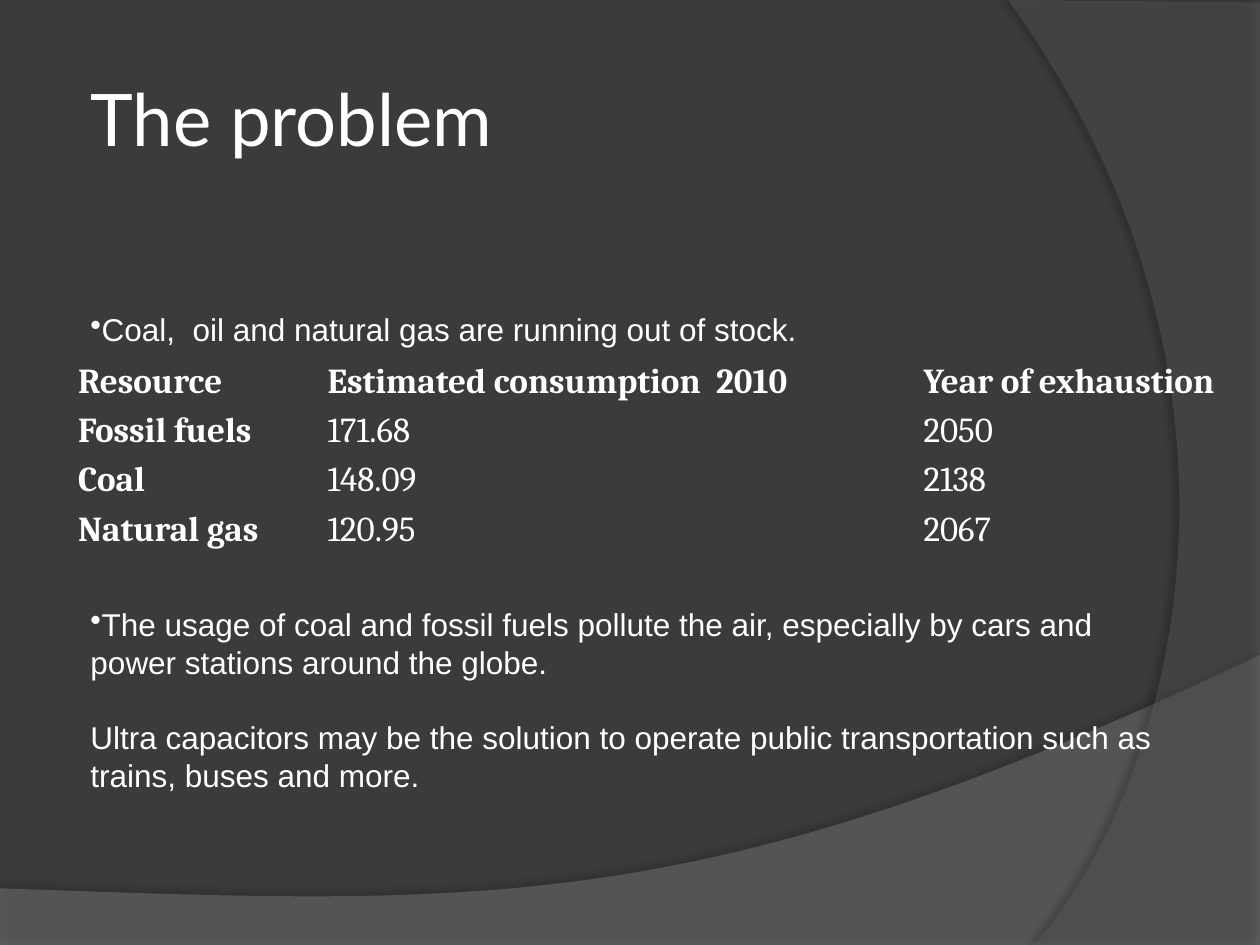
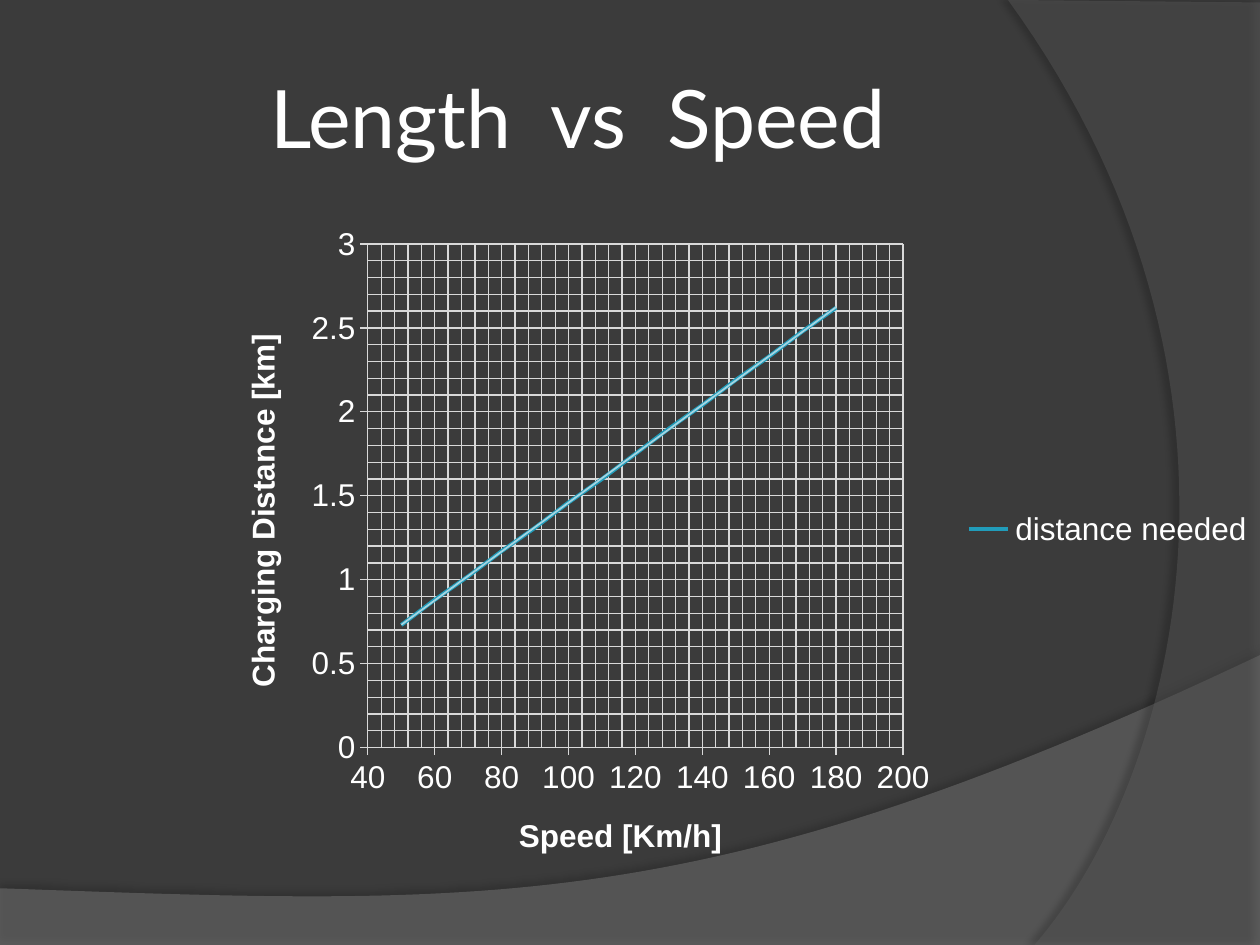
from copy import deepcopy
from dataclasses import dataclass

from pptx import Presentation
from pptx.chart.data import XyChartData
from pptx.dml.color import RGBColor
from pptx.enum.chart import XL_CHART_TYPE, XL_LEGEND_POSITION, XL_TICK_MARK
from pptx.enum.text import MSO_ANCHOR, PP_ALIGN
from pptx.oxml import parse_xml
from pptx.oxml.ns import nsdecls, qn
from pptx.util import Emu, Pt

PX = 9144  # EMU per px, 100 px to the inch
WIDTH, HEIGHT = 1000, 750


@dataclass(frozen=True)
class Theme:
    background: str = "3B3B3B"
    text: str = "FFFFFF"
    wave: str = "7F7F7F"
    arc: str = "5E5E5E"
    grid: str = "D9D9D9"
    series: str = "219CBA"
    trend: str = "A5D5E2"
    title_font: str = "Lato"
    body_font: str = "Arial"
    table_font: str = "Cambria"
    title_size: float = 46
    small_title_size: float = 41.4
    body_size: float = 18
    table_size: float = 20


THEME = Theme()
NO_GRID_STYLE = "{2D5ABB26-0587-4C30-8999-92F81FD0307C}"

RESOURCES = [
    ("Resource", "Estimated consumption  2010", "Year of exhaustion"),
    ("Fossil fuels", "171.68", "2050"),
    ("Coal", "148.09", "2138"),
    ("Natural gas", "120.95", "2067"),
]
SPEEDS = range(50, 181, 10)
DISTANCES = [0.73, 0.88, 1.02, 1.17, 1.31, 1.46, 1.6,
             1.75, 1.9, 2.04, 2.19, 2.33, 2.48, 2.62]


def px(*lengths):
    return [Emu(round(length * PX)) for length in lengths]


def color(value):
    return RGBColor.from_string(value)


def curve(start, pull_start, pull_end, end, steps=60):
    """Points of a cubic curve, without its start."""
    points = []
    for step in range(1, steps + 1):
        t = step / steps
        weights = ((1 - t) ** 3, 3 * t * (1 - t) ** 2, 3 * t * t * (1 - t), t ** 3)
        corners = (start, pull_start, pull_end, end)
        points.append(tuple(sum(w * corner[axis] for w, corner in zip(weights, corners))
                            for axis in (0, 1)))
    return points


def write(frame, text, first=True, size=THEME.body_size, font=THEME.body_font,
          bold=False, align=PP_ALIGN.LEFT, bullet=None, before=0):
    para = frame.paragraphs[0] if first else frame.add_paragraph()
    para.alignment = align
    para.space_before = Pt(before)
    if bullet:
        para._p.get_or_add_pPr().append(
            parse_xml(f'<a:buChar {nsdecls("a")} char="{bullet}"/>'))
    span = para.add_run()
    span.text = text
    span.font.size, span.font.name, span.font.bold = Pt(size), font, bold
    span.font.color.rgb = color(THEME.text)


def chart_layout(x, y, w, h, inner=False):
    target = '<c:layoutTarget val="inner"/>' if inner else ""
    sizes = "".join(f'<c:{key} val="{value}"/>'
                    for key, value in zip("xywh", (x, y, w, h)))
    return parse_xml(
        f'<c:layout {nsdecls("c")}><c:manualLayout>{target}<c:xMode val="edge"/>'
        f'<c:yMode val="edge"/>{sizes}</c:manualLayout></c:layout>')


def drop_layout(element):
    for layout in element.findall(qn("c:layout")):
        element.remove(layout)


class Painter:
    def __init__(self, theme):
        self.theme = theme
        self.deck = Presentation()
        self.deck.slide_width, self.deck.slide_height = px(WIDTH, HEIGHT)
        self.page = None

    def new_page(self):
        self.page = self.deck.slides.add_slide(self.deck.slide_layouts[6])
        fill = self.page.background.fill
        fill.solid()
        fill.fore_color.rgb = color(self.theme.background)
        # Wave along the bottom
        self.outline([(0, 705), (0, HEIGHT), (WIDTH, HEIGHT), (WIDTH, 520)]
                     + curve((WIDTH, 520), (559, 729), (391, 719), (0, 705)),
                     self.theme.wave, opacity=45, shade=35, distance=3.5, angle=270)
        # Arc along the right side
        self.outline([(WIDTH, 2), (WIDTH, HEIGHT), (821, HEIGHT)]
                     + curve((821, HEIGHT), (935, 619), (1018, 300), (800, 0)),
                     self.theme.arc, opacity=40, shade=45, distance=4, angle=180)

    def outline(self, points, tone, opacity, shade, distance, angle):
        start, *rest = [px(*point) for point in points]
        builder = self.page.shapes.build_freeform(*start)
        builder.add_line_segments(rest, close=True)
        shape = builder.convert_to_shape()
        shape.fill.solid()
        shape.fill.fore_color.rgb = color(tone)
        shape.line.fill.background()
        shape.shadow.inherit = False
        properties = shape._element.spPr
        properties.find(qn("a:solidFill"))[0].append(
            parse_xml(f'<a:alpha {nsdecls("a")} val="{opacity * 1000}"/>'))
        properties.find(qn("a:effectLst")).append(parse_xml(
            f'<a:outerShdw {nsdecls("a")} blurRad="{Pt(4)}" dist="{Pt(distance)}" '
            f'dir="{angle * 60000}" algn="ctr" rotWithShape="0"><a:srgbClr val="000000">'
            f'<a:alpha val="{shade * 1000}"/></a:srgbClr></a:outerShdw>'))

    def text_box(self, x, y, w, h):
        frame = self.page.shapes.add_textbox(*px(x, y, w, h)).text_frame
        frame.word_wrap = True
        return frame

    def title(self, text, x, y, w, h, size, align=PP_ALIGN.LEFT):
        frame = self.text_box(x, y, w, h)
        frame.vertical_anchor = MSO_ANCHOR.MIDDLE
        frame.margin_left, frame.margin_right = px(5, 5)
        write(frame, text, size=size, font=self.theme.title_font, align=align)

    def table(self, rows, x, y, widths, heights):
        table = self.page.shapes.add_table(
            len(rows), len(widths), *px(x, y, sum(widths), sum(heights))).table
        table.first_row = table.horz_banding = False
        table._tbl.tblPr.find(qn("a:tableStyleId")).text = NO_GRID_STYLE
        for column, width in zip(table.columns, px(*widths)):
            column.width = width
        for row, height in zip(table.rows, px(*heights)):
            row.height = height
        for r, texts in enumerate(rows):
            for c, text in enumerate(texts):
                cell = table.cell(r, c)
                cell.fill.background()
                cell.margin_left, cell.margin_right = px(7, 7)
                cell.margin_top = cell.margin_bottom = 0
                write(cell.text_frame, text, size=self.theme.table_size,
                      font=self.theme.table_font, bold=r == 0 or c == 0)

    def axis(self, axis, title, low, high, major, minor):
        axis.minimum_scale, axis.maximum_scale = low, high
        axis.major_unit, axis.minor_unit = major, minor
        axis.major_tick_mark = XL_TICK_MARK.CROSS
        axis.minor_tick_mark = XL_TICK_MARK.NONE
        axis.tick_labels.number_format = "General"
        axis.tick_labels.number_format_is_linked = False
        axis.has_major_gridlines = axis.has_minor_gridlines = True
        for line in (axis.format.line, axis.major_gridlines.format.line):
            line.color.rgb = color(self.theme.grid)
            line.width = Pt(0.75)
        # Minor gridlines take the look of the major ones
        element = axis._element
        element.find(qn("c:minorGridlines")).append(
            deepcopy(element.find(qn("c:majorGridlines"))[0]))
        write(axis.axis_title.text_frame, title, bold=True, align=PP_ALIGN.CENTER)

    def scatter(self, name, points, x, y, w, h):
        data = XyChartData()
        series_data = data.add_series(name)
        for point in points:
            series_data.add_data_point(*point)
        chart = self.page.shapes.add_chart(
            XL_CHART_TYPE.XY_SCATTER_SMOOTH_NO_MARKERS, *px(x, y, w, h), data).chart
        chart.has_title = False
        chart.font.size, chart.font.name = Pt(self.theme.body_size), self.theme.body_font
        chart.font.color.rgb = color(self.theme.text)
        plot = chart.plots[0]
        plot.vary_by_categories = False
        series = plot.series[0]
        series.format.line.color.rgb = color(self.theme.series)
        series.format.line.width = Pt(2.25)
        series._element.find(qn("c:xVal")).addprevious(parse_xml(
            f'<c:trendline {nsdecls("c", "a")}><c:spPr><a:ln w="{Pt(1)}"><a:solidFill>'
            f'<a:srgbClr val="{self.theme.trend}"/></a:solidFill></a:ln></c:spPr>'
            '<c:trendlineType val="linear"/><c:dispRSqr val="0"/><c:dispEq val="0"/>'
            '</c:trendline>'))
        # Plot area and legend
        area = chart._chartSpace.chart.plotArea
        drop_layout(area)
        area.insert(0, chart_layout(0.15, 0.05, 0.51, 0.75, inner=True))
        chart.has_legend = True
        chart.legend.position = XL_LEGEND_POSITION.RIGHT
        chart.legend.include_in_layout = False
        legend = chart.legend._element
        drop_layout(legend)
        place = legend.find(qn("c:legendPos"))
        place.addnext(chart_layout(0.71, 0.43, 0.29, 0.09))
        place.addnext(parse_xml(f'<c:legendEntry {nsdecls("c")}><c:idx val="1"/>'
                                '<c:delete val="1"/></c:legendEntry>'))
        return chart


def problem_page(painter):
    painter.new_page()
    painter.title("The problem", 67, 50, 900, 87, THEME.small_title_size)
    write(painter.text_box(62, 241, 867, 40),
          "Coal,  oil and natural gas are running out of stock.", bullet="•")
    painter.table(RESOURCES, 55, 287, (198, 473, 275), (39, 39, 40, 46))
    notes = painter.text_box(62, 475, 867, 162)
    write(notes, "The usage of coal and fossil fuels pollute the air, especially by "
                 "cars and power stations around the globe.", bullet="•")
    write(notes, "Ultra capacitors may be the solution to operate public "
                 "transportation such as trains, buses and more.",
          first=False, before=21.5)


def speed_page(painter):
    painter.new_page()
    painter.title("Length  vs  Speed", 50, 30, 817, 125, THEME.title_size,
                  align=PP_ALIGN.CENTER)
    chart = painter.scatter("distance needed", zip(SPEEDS, DISTANCES),
                            167, 167, 833, 533)
    painter.axis(chart.category_axis, "Speed [Km/h]", 40, 200, 20, 4)
    painter.axis(chart.value_axis, "Charging Distance [km]", 0, 3, 0.5, 0.1)


def main():
    painter = Painter(THEME)
    problem_page(painter)
    speed_page(painter)
    painter.deck.save("out.pptx")


if __name__ == "__main__":
    main()
